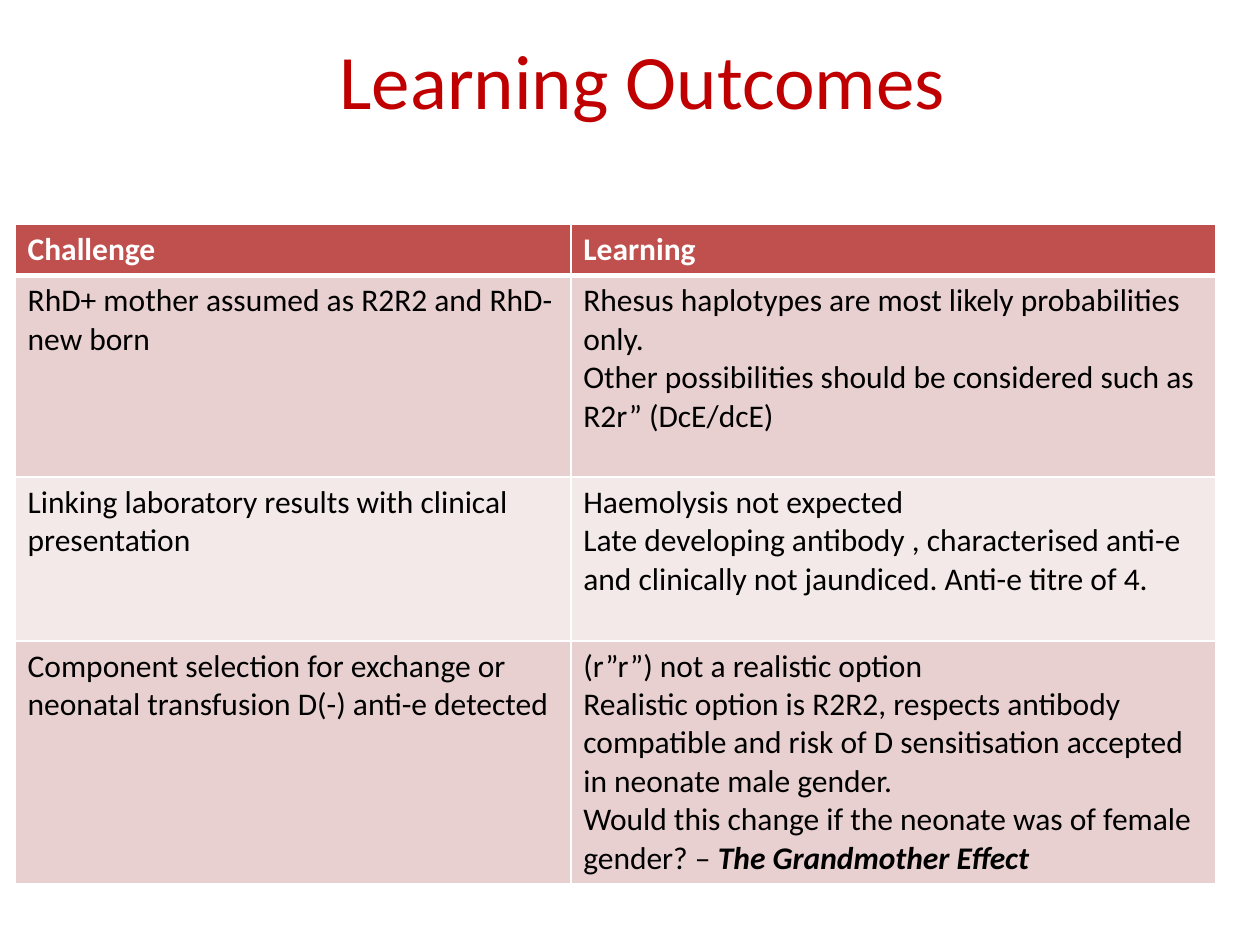
from dataclasses import dataclass

from lxml import etree
from pptx import Presentation
from pptx.dml.color import RGBColor
from pptx.enum.text import MSO_ANCHOR, PP_ALIGN
from pptx.oxml.ns import qn
from pptx.util import Emu, Inches, Pt

TOP = MSO_ANCHOR.TOP
CENTER = PP_ALIGN.CENTER
FONT = "Calibri"
WHITE, BLACK = "FFFFFF", "000000"
TITLE_RED, HEADER_RED = "C00000", "C0504D"
BANDS = ("E8D0D0", "F4E9E9")
COLUMN_WIDTHS = (4.41, 5.12)


@dataclass
class Row:
    height: float
    challenge: list[str]
    learning: list[str]
    emphasis: str = ""  # bold italic ending of the last learning paragraph


ROWS = [
    Row(0.4, ["Challenge"], ["Learning"]),
    Row(1.6, ["RhD+ mother assumed as R2R2 and RhD- new born"],
        ["Rhesus haplotypes are most likely probabilities only.",
         "Other possibilities should be considered such as R2r” (DcE/dcE)"]),
    Row(1.3, ["Linking laboratory results with clinical presentation"],
        ["Haemolysis not expected",
         "Late developing antibody , characterised anti-e and clinically "
         "not jaundiced. Anti-e titre of 4."]),
    Row(1.9, ["Component selection for exchange or neonatal transfusion "
              "D(-) anti-e detected"],
        ["(r”r”) not a realistic option",
         "Realistic option is R2R2, respects antibody compatible and risk of "
         "D sensitisation accepted in neonate male gender.",
         "Would this change if the neonate was of female gender? – "],
        "The Grandmother Effect"),
]


def color(value: str) -> RGBColor:
    return RGBColor.from_string(value)


def style_font(font, size: float, value: str, bold: bool = False) -> None:
    font.name, font.size, font.bold = FONT, Pt(size), bold
    font.color.rgb = color(value)


def set_borders(cell, top: float, bottom: float) -> None:
    """Draw white borders; widths are in points."""
    properties = cell._tc.get_or_add_tcPr()
    sides = {"a:lnL": 1, "a:lnR": 1, "a:lnT": top, "a:lnB": bottom}
    for position, (tag, width) in enumerate(sides.items()):
        line = etree.Element(qn(tag), w=str(Pt(width)))
        fill = etree.SubElement(line, qn("a:solidFill"))
        etree.SubElement(fill, qn("a:srgbClr"), val=WHITE)
        properties.insert(position, line)


def fill_cell(cell, paragraphs: list[str], row_index: int, emphasis: str = "") -> None:
    is_header = row_index == 0
    cell.fill.solid()
    cell.fill.fore_color.rgb = color(HEADER_RED if is_header else BANDS[(row_index - 1) % 2])
    set_borders(cell, 3 if row_index == 1 else 1, 3 if is_header else 1)
    cell.text_frame.text = "\n".join(paragraphs)
    for paragraph in cell.text_frame.paragraphs:
        for run in paragraph.runs:
            style_font(run.font, 18, WHITE if is_header else BLACK, is_header)
    if emphasis:
        run = cell.text_frame.paragraphs[-1].add_run()
        run.text = emphasis
        style_font(run.font, 18, BLACK, True)
        run.font.italic = True


def add_outcomes_table(slide, left: float, top: float) -> None:
    height = sum(row.height for row in ROWS)
    table = slide.shapes.add_table(
        len(ROWS), len(COLUMN_WIDTHS), Inches(left), Inches(top),
        Inches(sum(COLUMN_WIDTHS)), Inches(height)).table
    for column, width in zip(table.columns, COLUMN_WIDTHS):
        column.width = Inches(width)
    for index, row in enumerate(ROWS):
        table.rows[index].height = Inches(row.height)
        fill_cell(table.cell(index, 0), row.challenge, index)
        fill_cell(table.cell(index, 1), row.learning, index, row.emphasis)


def add_title(slide, text: str) -> None:
    title = slide.shapes.title
    title.left, title.top = Inches(0.2), Inches(0.21)
    title.width, title.height = Inches(9.8), Inches(1.14)
    title.text_frame.text = text
    title.text_frame.word_wrap = True
    title.text_frame.vertical_anchor = TOP
    paragraph = title.text_frame.paragraphs[0]
    paragraph.alignment = CENTER
    style_font(paragraph.font, 44, TITLE_RED)


def main() -> None:
    presentation = Presentation()
    presentation.slide_width, presentation.slide_height = Inches(10), Emu(Inches(7.5))
    slide = presentation.slides.add_slide(presentation.slide_layouts[5])
    slide.background.fill.solid()
    slide.background.fill.fore_color.rgb = color(WHITE)

    # Outcomes table under the title
    add_outcomes_table(slide, 0.12, 1.78)
    add_title(slide, "Learning Outcomes")
    presentation.save("out.pptx")


if __name__ == "__main__":
    main()
